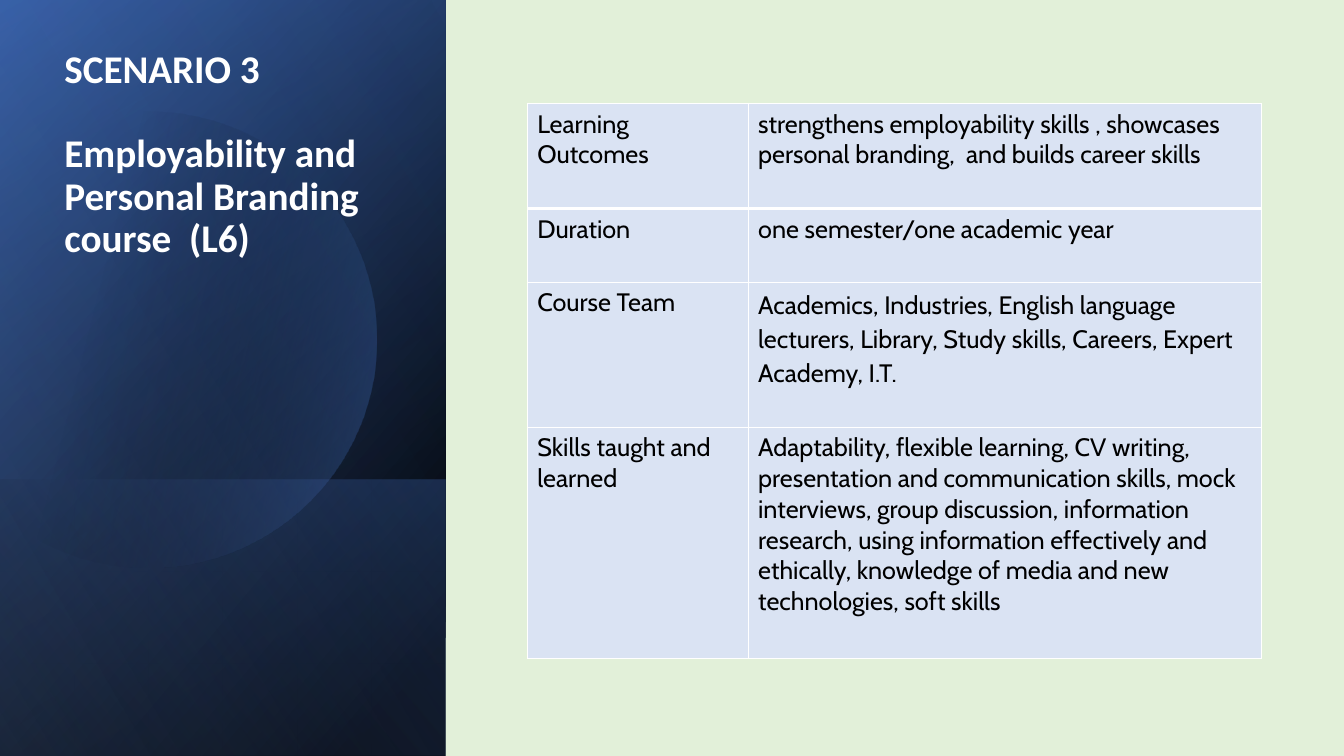
import math
import pptx
import pptx.dml.color
import pptx.enum.text
import pptx.oxml
import pptx.oxml.ns
import pptx.util
from pptx.dml.color import RGBColor
from pptx.util import Inches, Pt

HEADING = ["SCENARIO 3", "Employability and Personal Branding course  (L6)"]
COURSE_ROWS = [
    ("Learning Outcomes",
     "strengthens employability skills , showcases personal branding,  and builds career skills", 1.04),
    ("Duration", "one semester/one academic year", 0.73),
    ("Course Team",
     "Academics, Industries, English language lecturers, Library, Study skills, Careers, "
     "Expert Academy, I.T.", 1.44),
    ("Skills taught and learned",
     "Adaptability, flexible learning, CV writing, presentation and communication skills, "
     "mock interviews, group discussion, information research, using information effectively "
     "and ethically, knowledge of media and new technologies, soft skills", 2.29),
]
COLUMN_WIDTHS = [2.19, 5.09]
COURSE_TEAM = 2

PALE_GREEN = RGBColor(0xE2, 0xF0, 0xD9)
PALE_BLUE = RGBColor(0xDA, 0xE3, 0xF3)
WHITE = RGBColor(0xFF, 0xFF, 0xFF)
BLACK = RGBColor(0, 0, 0)
BLUE = RGBColor(0x44, 0x72, 0xC4)
DEEP_BLUE = RGBColor(0x2F, 0x55, 0x97)
LIGHT_BLUE = RGBColor(0x8F, 0xAA, 0xDC)

PANEL_WIDTH, PANEL_HEIGHT = 4.42, 7.5
FOOT_TOP = 4.76
CIRCLE_X, CIRCLE_Y, CIRCLE_RADIUS = 1.47, 3.37, 2.26
ARC_STEPS = 90

BASE_GLOW = (220, [(8, BLACK, 100), (100, DEEP_BLUE, 100)])
TOP_GLOW = (240, [(0, BLACK, 0), (99, BLUE, 46)])
FOOT_GLOW = (140, [(2, BLUE, 29), (100, BLACK, 30)])
CIRCLE_GLOW = (14, [(29, BLACK, 0), (100, BLUE, 43)])
SIDE_GLOW = (150, [(0, BLACK, 0), (99, LIGHT_BLUE, 11)])


def paint_glow(shape, glow):
    angle, stops = glow
    shape.shadow.inherit = False
    shape.line.fill.background()
    shape.fill.background()
    stop_xml = "".join(
        f'<a:gs pos="{position * 1000}"><a:srgbClr val="{color}">'
        f'<a:alpha val="{alpha * 1000}"/></a:srgbClr></a:gs>'
        for position, color, alpha in stops)
    gradient = pptx.oxml.parse_xml(
        f'<a:gradFill {pptx.oxml.ns.nsdecls("a")} rotWithShape="1"><a:gsLst>{stop_xml}</a:gsLst>'
        f'<a:lin ang="{angle * 60000}" scaled="0"/></a:gradFill>')
    properties = shape._element.spPr
    properties.replace(properties.find(pptx.oxml.ns.qn("a:noFill")), gradient)


def add_panel(shapes, top, glow):
    panel = shapes.add_shape(pptx.enum.shapes.MSO_SHAPE.RECTANGLE, 0, Inches(top),
                             Inches(PANEL_WIDTH), Inches(PANEL_HEIGHT - top))
    paint_glow(panel, glow)


def add_circle(shapes):
    reach = math.acos(-CIRCLE_X / CIRCLE_RADIUS)
    angles = [reach * (2 * step / ARC_STEPS - 1) for step in range(ARC_STEPS + 1)]
    points = [(Inches(CIRCLE_X + CIRCLE_RADIUS * math.cos(angle)),
               Inches(CIRCLE_Y + CIRCLE_RADIUS * math.sin(angle))) for angle in angles]
    outline = shapes.build_freeform(*points[0])
    outline.add_line_segments(points[1:], close=True)
    paint_glow(outline.convert_to_shape(), CIRCLE_GLOW)


def style_text(paragraph, font_name, size, color, bold=False):
    for run in paragraph.runs:
        run.font.name = font_name
        run.font.size = Pt(size)
        run.font.color.rgb = color
        run.font.bold = bold


def add_heading(shapes):
    frame = shapes.add_textbox(Inches(0.54), Inches(1.03), Inches(3.34), Inches(1.61)).text_frame
    frame.word_wrap = True
    frame.vertical_anchor = pptx.enum.text.MSO_ANCHOR.BOTTOM
    frame.text = "\n".join(HEADING)
    for paragraph in frame.paragraphs:
        paragraph.line_spacing = 0.9
        style_text(paragraph, "Calibri", 28, WHITE, True)
    frame.paragraphs[1].space_before = Pt(30)


def border_cell(cell, top_width, bottom_width):
    properties = cell._tc.get_or_add_tcPr()
    widths = [("lnL", 1), ("lnR", 1), ("lnT", top_width), ("lnB", bottom_width)]
    for position, (side, width) in enumerate(widths):
        properties.insert(position, pptx.oxml.parse_xml(
            f'<a:{side} {pptx.oxml.ns.nsdecls("a")} w="{Pt(width)}"><a:solidFill>'
            f'<a:srgbClr val="{WHITE}"/></a:solidFill></a:{side}>'))


def add_course_table(shapes):
    height = sum(row[2] for row in COURSE_ROWS)
    table = shapes.add_table(len(COURSE_ROWS), len(COLUMN_WIDTHS), Inches(5.23), Inches(1.03),
                             Inches(sum(COLUMN_WIDTHS)), Inches(height)).table
    for column, width in zip(table.columns, COLUMN_WIDTHS):
        column.width = Inches(width)
    for index, (label, detail, row_height) in enumerate(COURSE_ROWS):
        table.rows[index].height = Inches(row_height)
        for cell, text in zip(table.rows[index].cells, (label, detail)):
            cell.text = text
            cell.fill.solid()
            cell.fill.fore_color.rgb = PALE_BLUE
            style_text(cell.text_frame.paragraphs[0], "Cabin", 18, BLACK)
            border_cell(cell, 3 if index == 1 else 1, 3 if index == 0 else 1)
    table.cell(COURSE_TEAM, 1).text_frame.paragraphs[0].line_spacing = 1.1


def main():
    deck = pptx.Presentation()
    deck.slide_width, deck.slide_height = Inches(13.33), Inches(7.5)
    slide = deck.slides.add_slide(deck.slide_layouts[6])
    slide.background.fill.solid()
    slide.background.fill.fore_color.rgb = PALE_GREEN
    add_panel(slide.shapes, 0, BASE_GLOW)
    add_panel(slide.shapes, 0, TOP_GLOW)
    add_panel(slide.shapes, FOOT_TOP, FOOT_GLOW)
    add_circle(slide.shapes)
    add_panel(slide.shapes, 0, SIDE_GLOW)
    add_heading(slide.shapes)
    add_course_table(slide.shapes)
    deck.save("out.pptx")


if __name__ == "__main__":
    main()
